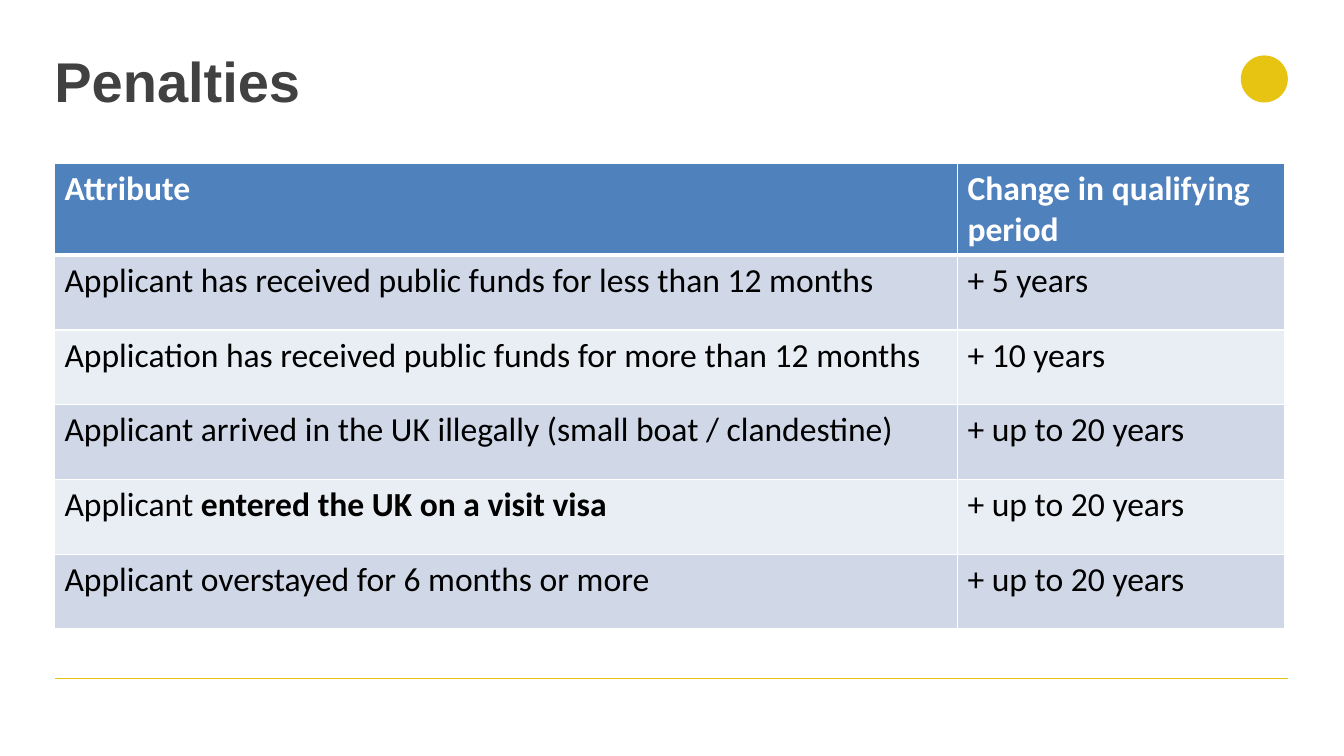
from dataclasses import dataclass

from lxml import etree
from pptx import Presentation
from pptx.dml.color import RGBColor
from pptx.enum.shapes import MSO_CONNECTOR, MSO_SHAPE
from pptx.enum.text import MSO_ANCHOR, PP_ALIGN
from pptx.oxml.ns import qn
from pptx.util import Pt

STRAIGHT = MSO_CONNECTOR.STRAIGHT
OVAL = MSO_SHAPE.OVAL
BOTTOM = MSO_ANCHOR.BOTTOM
LEFT = PP_ALIGN.LEFT
TITLE_ONLY = 5


@dataclass(frozen=True)
class Theme:
    title_font: str = "Arial"
    table_font: str = "Calibri"
    title_size: int = 40
    table_size: int = 24
    title: str = "414142"
    text: str = "000000"
    white: str = "FFFFFF"
    header: str = "4F81BD"
    bands: tuple = ("D0D8E8", "E9EDF4")
    rule: str = "E6C212"
    badge: str = "E8C412"


THEME = Theme()

COLUMNS = (645, 234)
ROW_HEIGHT = 53.4
HEADER_HEIGHT = 64.8
PENALTIES = [
    ([("Attribute", True)], [("Change in qualifying period", True)]),
    ([("Applicant has received public funds for less than 12 months", False)],
     [("+ 5 years", False)]),
    ([("Application has received public funds for more than 12 months", False)],
     [("+ 10 years", False)]),
    ([("Applicant arrived in the UK illegally (small boat / clandestine)", False)],
     [("+ up to 20 years", False)]),
    ([("Applicant ", False), ("entered the UK on a visit visa", True)],
     [("+ up to 20 years", False)]),
    ([("Applicant overstayed for 6 months or more", False)],
     [("+ up to 20 years", False)]),
]


def rgb(value):
    return RGBColor.from_string(value)


def add_run(p, text, font, size, color, bold):
    r = p.add_run()
    r.text = text
    r.font.name = font
    r.font.size = Pt(size)
    r.font.bold = bold
    r.font.color.rgb = rgb(color)


def set_title(s, text, left, top, width, height):
    sp = s.shapes.title
    sp.left, sp.top, sp.width, sp.height = Pt(left), Pt(top), Pt(width), Pt(height)
    tf = sp.text_frame
    tf.margin_left = tf.margin_top = tf.margin_right = tf.margin_bottom = 0
    tf.vertical_anchor = BOTTOM
    tf.word_wrap = True
    p = tf.paragraphs[0]
    p.alignment = LEFT
    add_run(p, text, THEME.title_font, THEME.title_size, THEME.title, True)


def add_rule(s, left, top, width):
    line = s.shapes.add_connector(STRAIGHT, Pt(left), Pt(top), Pt(left + width), Pt(top))
    line.line.color.rgb = rgb(THEME.rule)
    line.line.width = Pt(0.96)
    etree.SubElement(line._element.spPr, qn("a:effectLst"))


def add_badge(s, left, top, size):
    sp = s.shapes.add_shape(OVAL, Pt(left), Pt(top), Pt(size), Pt(size))
    sp.shadow.inherit = False
    sp.fill.solid()
    sp.fill.fore_color.rgb = rgb(THEME.badge)
    sp.line.fill.background()


def set_borders(cell, top, bottom):
    tc_pr = cell._tc.get_or_add_tcPr()
    widths = {"a:lnL": 1, "a:lnR": 1, "a:lnT": top, "a:lnB": bottom}
    for i, (tag, width) in enumerate(widths.items()):
        ln = etree.Element(qn(tag), w=str(Pt(width)))
        fill = etree.SubElement(ln, qn("a:solidFill"))
        etree.SubElement(fill, qn("a:srgbClr"), val=THEME.white)
        tc_pr.insert(i, ln)


def fill_cell(cell, runs, row):
    cell.fill.solid()
    band = THEME.bands[(row - 1) % 2]
    cell.fill.fore_color.rgb = rgb(band if row else THEME.header)
    set_borders(cell, 3 if row == 1 else 1, 1 if row else 3)
    color = THEME.text if row else THEME.white
    p = cell.text_frame.paragraphs[0]
    for text, bold in runs:
        add_run(p, text, THEME.table_font, THEME.table_size, color, bold)


def add_penalty_table(s, left, top):
    height = HEADER_HEIGHT + ROW_HEIGHT * (len(PENALTIES) - 1)
    frame = s.shapes.add_table(len(PENALTIES), len(COLUMNS), Pt(left), Pt(top),
                               Pt(sum(COLUMNS)), Pt(height))
    table = frame.table
    for column, width in zip(table.columns, COLUMNS):
        column.width = Pt(width)
    for i, row in enumerate(PENALTIES):
        table.rows[i].height = Pt(ROW_HEIGHT if i else HEADER_HEIGHT)
        for j, runs in enumerate(row):
            fill_cell(table.cell(i, j), runs, i)


def main():
    prs = Presentation()
    prs.slide_width, prs.slide_height = Pt(960), Pt(540)
    s = prs.slides.add_slide(prs.slide_layouts[TITLE_ONLY])
    add_rule(s, 39.6, 484.6, 880.6)
    add_badge(s, 886.3, 39.6, 33.6)
    set_title(s, "Penalties", 38.9, 31.7, 534.2, 49.7)
    add_penalty_table(s, 38.9, 116.6)
    prs.save("out.pptx")


if __name__ == "__main__":
    main()
